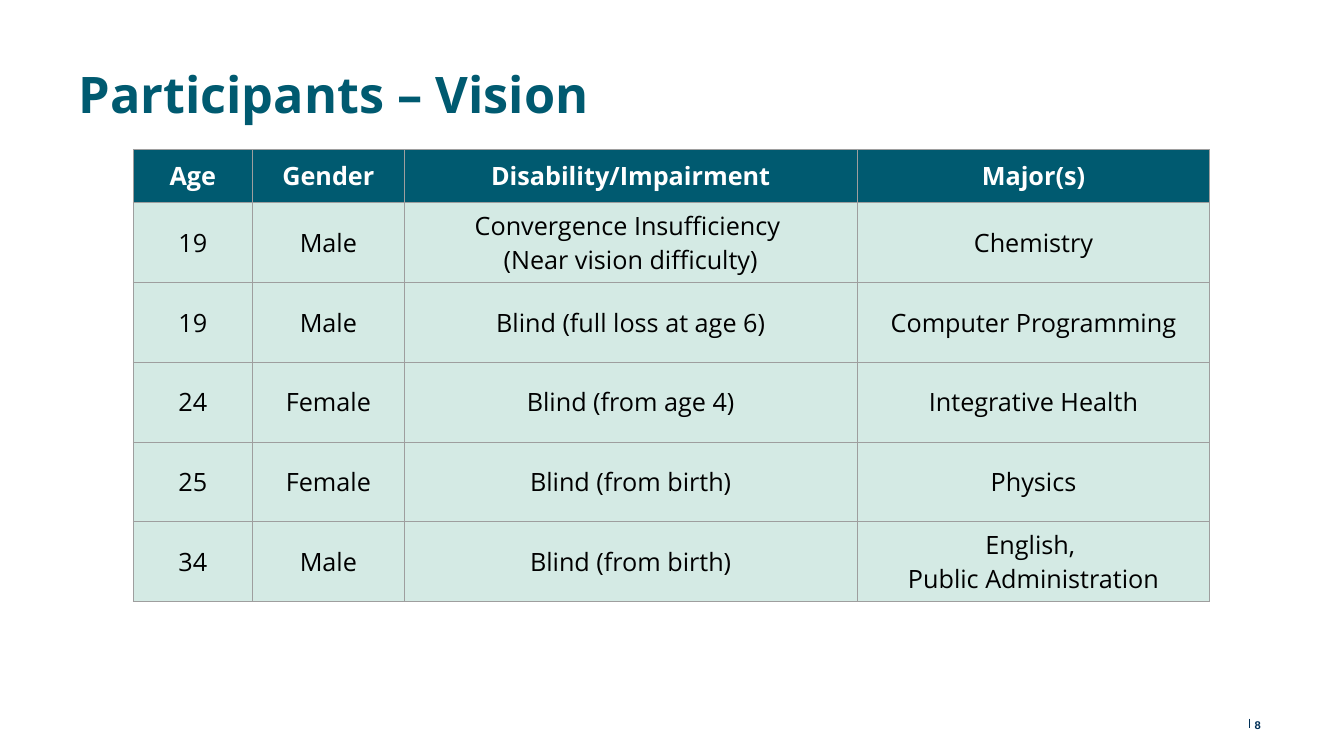
from dataclasses import dataclass

from lxml.etree import SubElement
from pptx import Presentation
from pptx.dml.color import RGBColor
from pptx.enum.shapes import MSO_CONNECTOR
from pptx.enum.text import MSO_ANCHOR, PP_ALIGN
from pptx.oxml.ns import qn
from pptx.util import Cm, Pt


@dataclass(frozen=True)
class Theme:
    teal: str = "005A70"
    mint: str = "D4EAE4"
    navy: str = "003057"
    gray: str = "9E9E9E"
    white: str = "FFFFFF"
    black: str = "000000"
    font: str = "Open Sans"
    number_font: str = "Arial"
    title_size: int = 36
    table_size: int = 18
    number_size: int = 8
    line_width: float = 0.75


theme = Theme()


def add_run(paragraph, text, size, color, bold, font=theme.font):
    run = paragraph.add_run()
    run.text = text
    run.font.name = font
    run.font.size = Pt(size)
    run.font.bold = bold
    run.font.color.rgb = RGBColor.from_string(color)


def add_borders(cell):
    properties = cell._tc.get_or_add_tcPr()
    for side in ("a:lnL", "a:lnR", "a:lnT", "a:lnB"):
        border = SubElement(properties, qn(side), w=str(Pt(theme.line_width)))
        fill = SubElement(border, qn("a:solidFill"))
        SubElement(fill, qn("a:srgbClr"), val=theme.gray)


presentation = Presentation()
presentation.slide_width = Cm(33.87)
presentation.slide_height = Cm(19.05)
slide = presentation.slides.add_slide(presentation.slide_layouts[6])

title = slide.shapes.add_textbox(Cm(1.73), Cm(1.17), Cm(30.4), Cm(2.16))
title_frame = title.text_frame
title_frame.word_wrap = True
title_frame.margin_left = title_frame.margin_right = Cm(0.25)
title_frame.margin_top = title_frame.margin_bottom = Cm(0.25)
title_paragraph = title_frame.paragraphs[0]
title_paragraph.line_spacing = 1.11
add_run(title_paragraph, "Participants – Vision", theme.title_size, theme.teal, True)

participants = [
    ("Age", "Gender", "Disability/Impairment", "Major(s)"),
    ("19", "Male", "Convergence Insufficiency \v(Near vision difficulty)", "Chemistry"),
    ("19", "Male", "Blind (full loss at age 6)", "Computer Programming"),
    ("24", "Female", "Blind (from age 4)", "Integrative Health"),
    ("25", "Female", "Blind (from birth)", "Physics"),
    ("34", "Male", "Blind (from birth)", "English, \nPublic Administration"),
]
column_widths = [3, 3.83, 11.41, 8.89]
row_heights = [1.34] + [2.01] * 5

table = slide.shapes.add_table(
    len(row_heights), len(column_widths), Cm(3.36), Cm(3.77),
    Cm(sum(column_widths)), Cm(sum(row_heights)),
).table
for column, width in zip(table.columns, column_widths):
    column.width = Cm(width)
for row, height in zip(table.rows, row_heights):
    row.height = Cm(height)

for row_index, participant in enumerate(participants):
    is_header = row_index == 0
    text_color = theme.white if is_header else theme.black
    fill_color = theme.teal if is_header else theme.mint
    for column_index, text in enumerate(participant):
        cell = table.cell(row_index, column_index)
        add_borders(cell)
        cell.fill.solid()
        cell.fill.fore_color.rgb = RGBColor.from_string(fill_color)
        cell.vertical_anchor = MSO_ANCHOR.MIDDLE
        frame = cell.text_frame
        for paragraph_index, paragraph_text in enumerate(text.split("\n")):
            paragraph = frame.add_paragraph() if paragraph_index else frame.paragraphs[0]
            paragraph.alignment = PP_ALIGN.CENTER
            for line_index, line_text in enumerate(paragraph_text.split("\v")):
                if line_index:
                    paragraph.add_line_break()
                add_run(paragraph, line_text, theme.table_size, text_color, is_header)

divider = slide.shapes.add_connector(
    MSO_CONNECTOR.STRAIGHT, Cm(31.5), Cm(18.11), Cm(31.5), Cm(18.34)
)
divider.line.color.rgb = RGBColor.from_string(theme.navy)
divider.line.width = Pt(theme.line_width)
SubElement(divider._element.spPr, qn("a:effectLst"))

number = slide.shapes.add_textbox(Cm(31.62), Cm(18.11), Cm(0.46), Cm(0.3))
number_frame = number.text_frame
number_frame.word_wrap = True
number_frame.margin_left = number_frame.margin_right = 0
number_frame.margin_top = number_frame.margin_bottom = 0
number_frame.vertical_anchor = MSO_ANCHOR.MIDDLE
add_run(number_frame.paragraphs[0], "8", theme.number_size, theme.navy, True, theme.number_font)

presentation.save("out.pptx")
